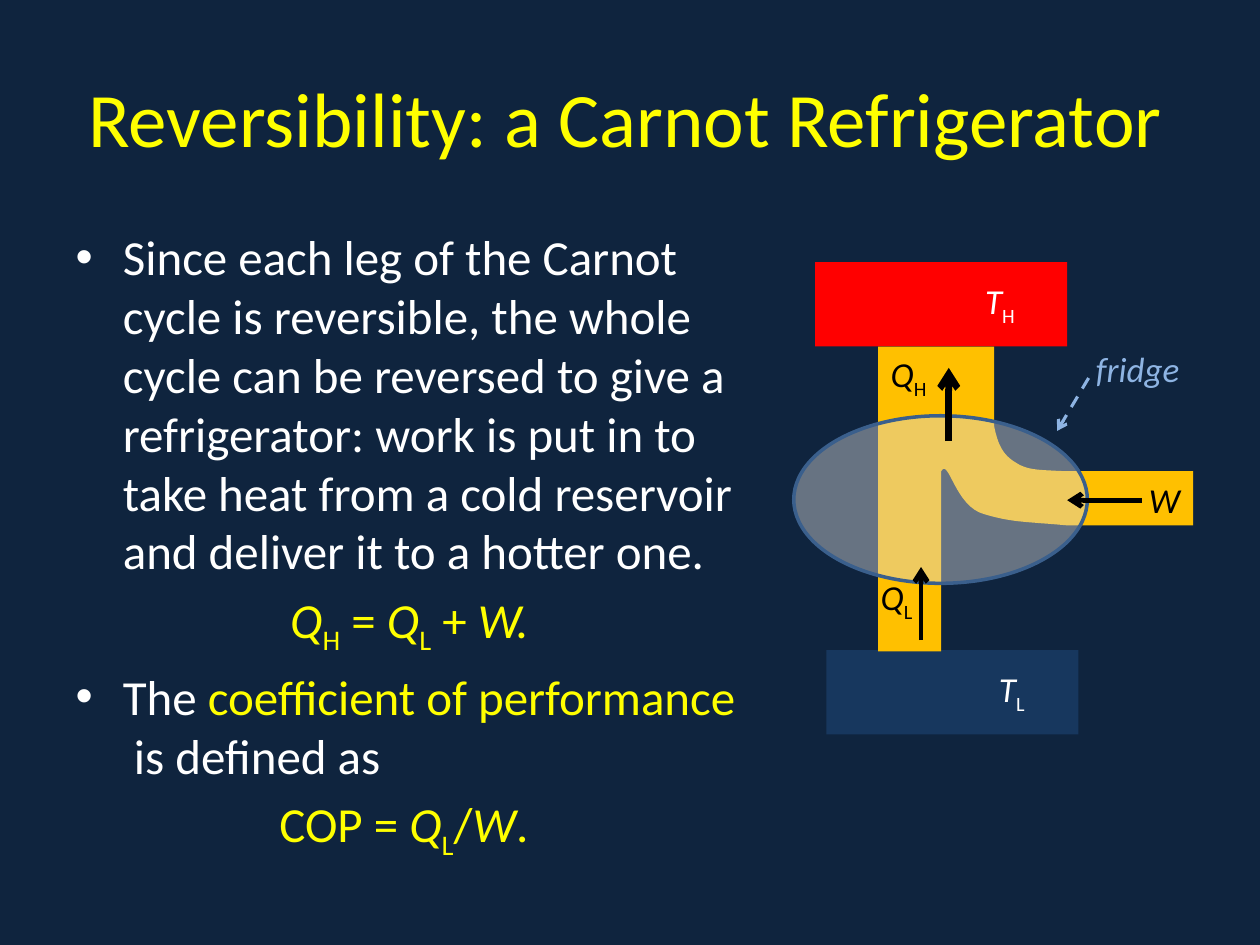
from dataclasses import dataclass

from lxml.etree import SubElement
from pptx import Presentation
from pptx.dml.color import RGBColor
from pptx.enum.dml import MSO_LINE_DASH_STYLE as Dash
from pptx.enum.shapes import MSO_CONNECTOR as Connector, MSO_SHAPE as Preset
from pptx.enum.text import MSO_AUTO_SIZE as AutoSize, PP_ALIGN as Align
from pptx.oxml.ns import qn
from pptx.util import Inches, Pt

COLUMNS, ROWS = 100, 75
CELL = Inches(0.1)


@dataclass(frozen=True)
class Theme:
    font: str = "Calibri"
    background: str = "0F243E"
    accent: str = "FFFF00"
    light: str = "FFFFFF"
    dark: str = "000000"
    hot: str = "FF0000"
    cold: str = "17375E"
    flow: str = "FFC000"
    engine: str = "D9D9D9"
    engine_edge: str = "3A5F8C"
    note: str = "8EB4E3"
    title_size: int = 44
    body_size: int = 28
    label_size: int = 20


THEME = Theme()


@dataclass(frozen=True)
class Box:
    """A place on the slide grid, in columns and rows."""
    column: float
    row: float
    columns: float
    rows: float

    def lengths(self) -> list[int]:
        return [round(n * CELL) for n in (self.column, self.row, self.columns, self.rows)]


@dataclass(frozen=True)
class Piece:
    text: str
    color: str
    italic: bool = False
    subscript: bool = False


@dataclass(frozen=True)
class Block:
    box: Box
    color: str
    preset: Preset = Preset.RECTANGLE
    opacity: int = 100
    edge: str = ""


@dataclass(frozen=True)
class Arrow:
    start: tuple[float, float]
    end: tuple[float, float]
    weight: float
    color: str = THEME.dark
    dashed: bool = False


@dataclass(frozen=True)
class Label:
    column: float
    row: float
    pieces: list[Piece]
    columns: float = 5


def symbol(letter: str, index: str, color: str) -> list[Piece]:
    """An italic letter with an upright subscript."""
    return [Piece(letter, color, italic=True), Piece(index, color, subscript=True)]


def rgb(color: str) -> RGBColor:
    return RGBColor.from_string(color)


def write(paragraph, pieces: list[Piece], size: int) -> None:
    for piece in pieces:
        run = paragraph.add_run()
        run.text = piece.text
        font = run.font
        font.name, font.size, font.italic = THEME.font, Pt(size), piece.italic
        font.color.rgb = rgb(piece.color)
        if piece.subscript:
            font._element.set("baseline", "-25000")


def place(shape, box: Box) -> None:
    shape.left, shape.top, shape.width, shape.height = box.lengths()


def paint(shape, color: str) -> None:
    shape.shadow.inherit = False
    shape.fill.solid()
    shape.fill.fore_color.rgb = rgb(color)
    shape.line.fill.background()


def draw_block(slide, block: Block) -> None:
    shape = slide.shapes.add_shape(block.preset, *block.box.lengths())
    paint(shape, block.color)
    if block.opacity < 100:
        fill_color = shape._element.spPr.find(qn("a:solidFill"))[0]
        SubElement(fill_color, qn("a:alpha"), val=str(block.opacity * 1000))
    if block.edge:
        shape.line.color.rgb = rgb(block.edge)
        shape.line.width = Pt(2)


def draw_arrow(slide, arrow: Arrow) -> None:
    ends = [round(n * CELL) for n in (*arrow.start, *arrow.end)]
    connector = slide.shapes.add_connector(Connector.STRAIGHT, *ends)
    line = connector.line
    line.color.rgb, line.width = rgb(arrow.color), Pt(arrow.weight)
    if arrow.dashed:
        line.dash_style = Dash.DASH
    properties = connector._element.spPr
    SubElement(properties.find(qn("a:ln")), qn("a:tailEnd"), type="arrow")
    SubElement(properties, qn("a:effectLst"))


def draw_label(slide, label: Label) -> None:
    box = Box(label.column, label.row, label.columns, 4.4)
    frame = slide.shapes.add_textbox(*box.lengths()).text_frame
    frame.word_wrap = True
    frame.margin_right = 0
    write(frame.paragraphs[0], label.pieces, THEME.label_size)


def bezier(p0, p1, p2, p3, steps: int = 16) -> list[tuple[float, float]]:
    """Points along a cubic curve, without its first one."""
    points = []
    for step in range(1, steps + 1):
        t = step / steps
        weights = ((1 - t) ** 3, 3 * t * (1 - t) ** 2, 3 * t * t * (1 - t), t ** 3)
        points.append(tuple(sum(w * p[axis] for w, p in zip(weights, (p0, p1, p2, p3)))
                            for axis in (0, 1)))
    return points


def draw_flow(slide) -> None:
    """The heat channel, joined from the right by the work channel."""
    outline = [
        (69.7, 27.5), (69.7, 51.7), (74.7, 51.7),
        (74.7, 37.4),
        *bezier((74.7, 37.4), (75.3, 36.3), (75.8, 40.2), (78.1, 40.8)),
        *bezier((78.1, 40.8), (80.4, 41.5), (81.6, 41.4), (84.7, 41.7)),
        (94.7, 41.7), (94.7, 37.4), (84.7, 37.4),
        *bezier((84.7, 37.4), (82.3, 37.3), (81.5, 37.3), (80.6, 36.7)),
        *bezier((80.6, 36.7), (79.6, 36.1), (79.2, 35.3), (78.9, 33.8)),
    ]
    builder = slide.shapes.build_freeform(round(78.9 * CELL), round(27.5 * CELL))
    builder.add_line_segments([(round(x * CELL), round(y * CELL)) for x, y in outline])
    paint(builder.convert_to_shape(), THEME.flow)


def fill_body(body) -> None:
    light, accent = THEME.light, THEME.accent
    q_low = symbol("Q", "L", accent)
    statements = [
        (False, [Piece("Since each leg of the Carnot cycle is reversible, the whole cycle can be "
                       "reversed to give a refrigerator: work is put in to take heat from a cold "
                       "reservoir and deliver it to a hotter one.", light)]),
        (True, [*symbol("Q", "H", accent), Piece(" = ", accent), *q_low,
                Piece(" + ", accent), Piece("W.", accent, italic=True)]),
        (False, [Piece("The", light), Piece(" coefficient of performance ", accent),
                 Piece(" is defined as", light)]),
        (True, [Piece("COP = ", accent), *q_low, Piece("/", accent),
                Piece("W", accent, italic=True), Piece(". ", accent)]),
    ]
    frame = body.text_frame
    frame.auto_size = AutoSize.NONE
    for number, (is_equation, pieces) in enumerate(statements):
        paragraph = frame.add_paragraph() if number else frame.paragraphs[0]
        if is_equation:
            paragraph.alignment = Align.CENTER
            SubElement(paragraph._p.get_or_add_pPr(), qn("a:buNone"))
        write(paragraph, pieces, THEME.body_size)


def main() -> None:
    deck = Presentation()
    deck.slide_width, deck.slide_height = COLUMNS * CELL, ROWS * CELL
    slide = deck.slides.add_slide(deck.slide_layouts[1])
    slide.background.fill.solid()
    slide.background.fill.fore_color.rgb = rgb(THEME.background)

    title, body = slide.placeholders
    place(title, Box(3.4, 3, 92.5, 12.5))
    write(title.text_frame.paragraphs[0],
          [Piece("Reversibility: a Carnot Refrigerator", THEME.accent)], THEME.title_size)
    place(body, Box(5, 17.5, 55, 53.3))
    fill_body(body)

    draw_block(slide, Block(Box(64.7, 20.8, 20, 6.7), THEME.hot))
    draw_block(slide, Block(Box(65.6, 51.6, 20, 6.7), THEME.cold))
    draw_flow(slide)
    draw_block(slide, Block(Box(63, 33, 23.3, 13.3), THEME.engine, Preset.OVAL,
                            opacity=44, edge=THEME.engine_edge))
    for arrow in (
        Arrow((75.3, 35), (75.3, 29.2), 3.75),
        Arrow((73.1, 50.8), (73.1, 45), 2.75),
        Arrow((90.6, 39.7), (84.7, 39.7), 2.75),
        Arrow((86.4, 30), (83.9, 34.2), 1.75, THEME.note, dashed=True),
    ):
        draw_arrow(slide, arrow)
    for label in (
        Label(69.7, 27.5, symbol("Q", "H", THEME.dark)),
        Label(78.3, 52.5, symbol("T", "L", THEME.light)),
        Label(77.2, 21.7, symbol("T", "H", THEME.light)),
        Label(68.9, 45.2, symbol("Q", "L", THEME.dark)),
        Label(90.2, 37.5, [Piece("W", THEME.dark, italic=True)]),
        Label(86, 27.1, [Piece("fridge", THEME.note, italic=True)], columns=10),
    ):
        draw_label(slide, label)
    deck.save("out.pptx")


if __name__ == "__main__":
    main()
